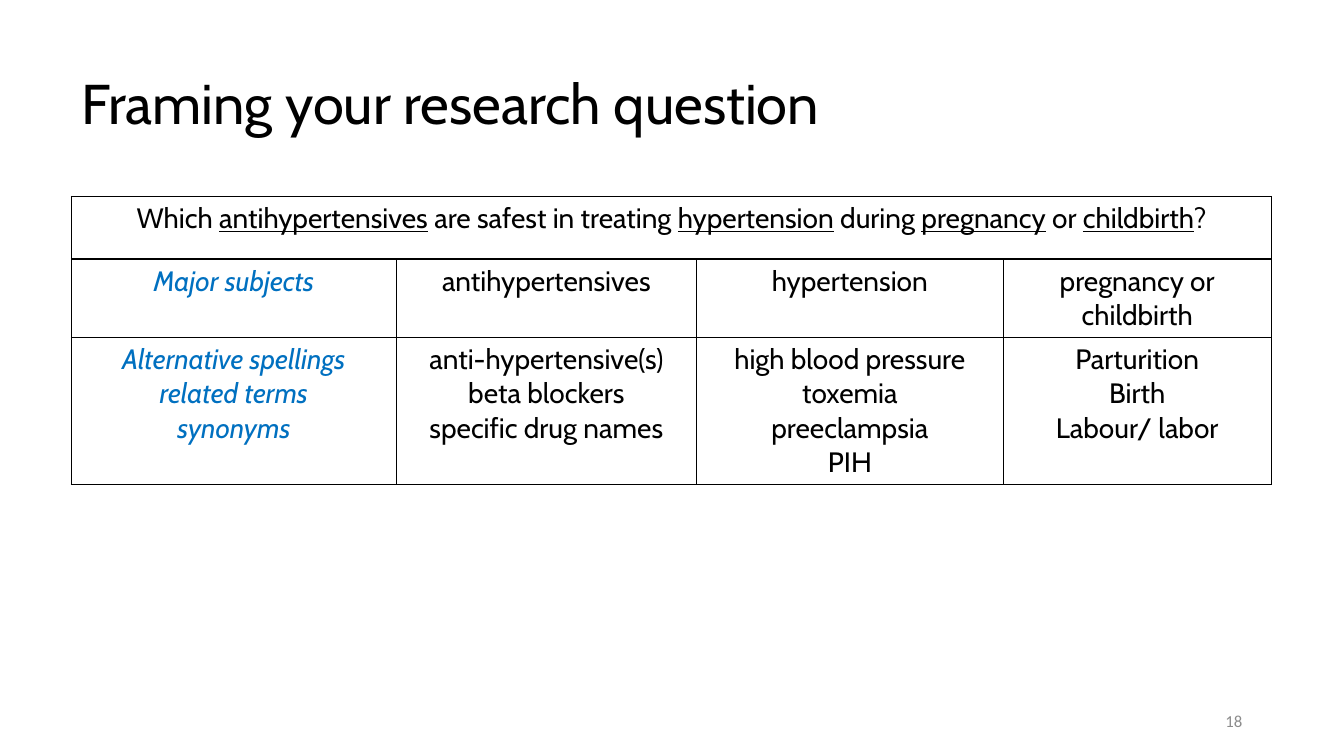
"""Build a slide that frames a research question as a table of search terms."""
from lxml import etree
from pptx import Presentation
from pptx import util as u
from pptx.dml.color import RGBColor
from pptx.enum import text
from pptx.oxml import ns

QUESTION = ("Which _antihypertensives_ are safest in treating _hypertension_ "
            "during _pregnancy_ or _childbirth_?")
TERMS = [
    ["Major subjects", "antihypertensives", "hypertension", "pregnancy or childbirth"],
    ["Alternative spellings\nrelated terms\nsynonyms",
     "anti-hypertensive(s)\nbeta blockers\nspecific drug names",
     "high blood pressure\ntoxemia\npreeclampsia\nPIH",
     "Parturition\nBirth\nLabour/ labor"],
]
COLUMN_WIDTHS = [3.22, 2.98, 3.04, 2.66]
ROW_HEIGHTS = [0.62, 0.78, 1.45]


def color(value):
    return RGBColor.from_string(value)


def write(frame, content, size=20, font="Cabin", ink="000000", italic=False,
          align=text.PP_ALIGN.LEFT):
    for index, line in enumerate(content.split("\n")):
        paragraph = frame.add_paragraph() if index else frame.paragraphs[0]
        paragraph.alignment = align
        for part, wording in enumerate(line.split("_")):
            run = paragraph.add_run()
            run.text = wording
            run.font.size = u.Pt(size)
            run.font.name = font
            run.font.color.rgb = color(ink)
            run.font.italic = italic
            run.font.underline = part % 2 == 1


class Slide:
    def __init__(self, deck, border="000000", accent="0070C0"):
        self.slide = deck.slides.add_slide(deck.slide_layouts[6])
        self.border = border
        self.accent = accent

    def label(self, content, left, top, width, height,
              anchor=text.MSO_ANCHOR.TOP, **style):
        box = self.slide.shapes.add_textbox(*map(u.Inches, (left, top, width, height)))
        box.text_frame.word_wrap = True
        box.text_frame.vertical_anchor = anchor
        write(box.text_frame, content, **style)

    def outline(self, cell):
        properties = cell._tc.get_or_add_tcPr()
        for position, side in enumerate(("lnL", "lnR", "lnT", "lnB")):
            line = etree.Element(ns.qn(f"a:{side}"), w=str(u.Pt(1)))
            fill = etree.SubElement(line, ns.qn("a:solidFill"))
            etree.SubElement(fill, ns.qn("a:srgbClr"), val=self.border)
            properties.insert(position, line)

    def term_table(self, question, terms, left, top):
        size = sum(COLUMN_WIDTHS), sum(ROW_HEIGHTS)
        table = self.slide.shapes.add_table(
            len(ROW_HEIGHTS), len(COLUMN_WIDTHS),
            *map(u.Inches, (left, top, *size))).table
        table.first_row = table.horz_banding = False
        for column, width in zip(table.columns, COLUMN_WIDTHS):
            column.width = u.Inches(width)
        for row, height in zip(table.rows, ROW_HEIGHTS):
            row.height = u.Inches(height)
        for cell in table.iter_cells():
            cell.fill.background()
            self.outline(cell)
        heading = table.cell(0, 0)
        heading.merge(table.cell(0, len(COLUMN_WIDTHS) - 1))
        write(heading.text_frame, question, align=text.PP_ALIGN.CENTER)
        for row, entries in enumerate(terms, 1):
            for column, entry in enumerate(entries):
                is_category = column == 0
                write(table.cell(row, column).text_frame, entry,
                      ink=self.accent if is_category else "000000",
                      italic=is_category, align=text.PP_ALIGN.CENTER)


def main():
    deck = Presentation()
    deck.slide_width, deck.slide_height = u.Inches(13.33), u.Inches(7.5)
    page = Slide(deck)
    page.term_table(QUESTION, TERMS, 0.71, 1.95)
    page.label("18", 9.42, 6.95, 3, 0.4, anchor=text.MSO_ANCHOR.MIDDLE,
               size=12, font="Calibri", ink="8C8C8C", align=text.PP_ALIGN.RIGHT)
    page.label("Framing your research question", 0.71, 0.63, 11.82, 0.77, size=40)
    deck.save("out.pptx")


if __name__ == "__main__":
    main()
